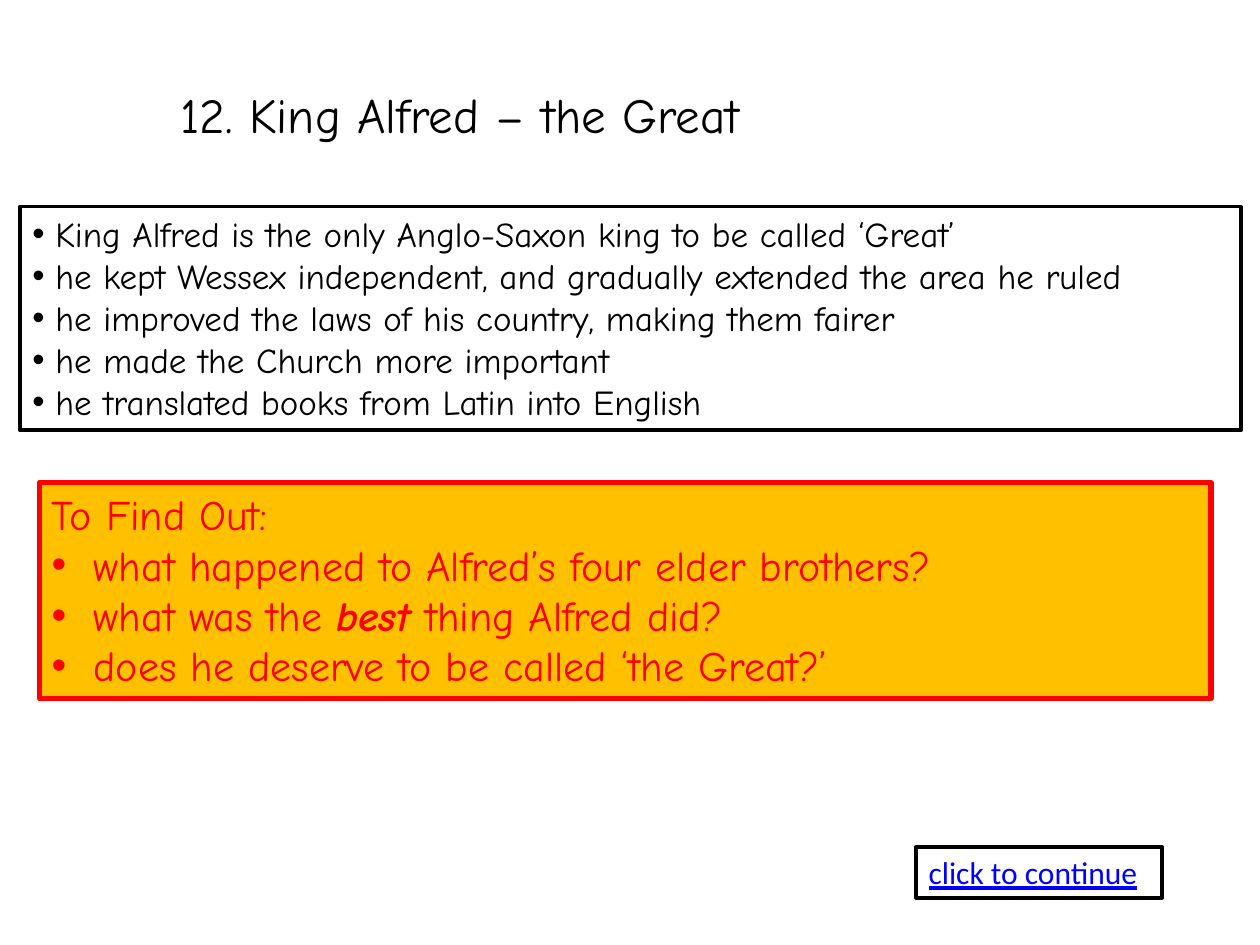
from lxml import etree
from pptx import Presentation
from pptx.dml.color import RGBColor
from pptx.enum.text import MSO_ANCHOR, MSO_AUTO_SIZE, PP_ALIGN
from pptx.oxml.ns import qn
from pptx.util import Pt

TOP, LEFT, FIXED = MSO_ANCHOR.TOP, PP_ALIGN.LEFT, MSO_AUTO_SIZE.NONE
TITLE_ONLY = 5
COMIC, PLAIN = "Comic Neue", "Calibri"
BLACK, RED, AMBER, BLUE = "000000", "FF0000", "FFC000", "0000FF"

# Content: a paragraph is a list of (text, emphasised) runs
TITLE = [[("12. King Alfred – the Great", False)]]
FACTS = [[(fact, False)] for fact in (
    "King Alfred is the only Anglo-Saxon king to be called ‘Great’",
    "he kept Wessex independent, and gradually extended the area he ruled",
    "he improved the laws of his country, making them fairer",
    "he made the Church more important",
    "he translated books from Latin into English",
)]
QUESTIONS = [
    [("To Find Out:", False)],
    [("what happened to Alfred’s four elder brothers?", False)],
    [("what was the ", False), ("best", True), (" thing Alfred did?", False)],
    [("does he deserve to be called ‘the Great?’", False)],
]
CONTINUE = [[("click to continue", False)]]

# Boxes: left, top, width, height, in points
TITLE_AT = (96, 44.5, 456, 41)
FACTS_AT = (11.5, 118, 697.5, 128)
QUESTIONS_AT = (22.5, 275.75, 669.5, 123.5)
CONTINUE_AT = (523.5, 484, 140.5, 29)


def color(value):
    return RGBColor.from_string(value)


def place(shape, box):
    shape.left, shape.top, shape.width, shape.height = map(Pt, box)


def add_bullet(paragraph, indent):
    properties = paragraph._p.get_or_add_pPr()
    properties.set("marL", str(Pt(indent)))
    properties.set("indent", str(-Pt(indent)))
    etree.SubElement(properties, qn("a:buFont")).set("typeface", "Arial")
    etree.SubElement(properties, qn("a:buChar")).set("char", "•")


def write(shape, paragraphs, size, font, ink, indent=0, unbulleted=0, underline=None):
    frame = shape.text_frame
    frame.word_wrap = True
    frame.auto_size = FIXED
    frame.vertical_anchor = TOP
    for number, runs in enumerate(paragraphs):
        paragraph = frame.add_paragraph() if number else frame.paragraphs[0]
        paragraph.alignment = LEFT
        if indent and number >= unbulleted:
            add_bullet(paragraph, indent)
        for text, emphasised in runs:
            run = paragraph.add_run()
            run.text = text
            run.font.size = Pt(size)
            run.font.name = font
            run.font.color.rgb = color(ink)
            run.font.underline = underline
            if emphasised:
                run.font.bold = run.font.italic = True


def add_box(slide, box, line, line_width, fill=None):
    shape = slide.shapes.add_textbox(*map(Pt, box))
    shape.line.color.rgb = color(line)
    shape.line.width = Pt(line_width)
    if fill:
        shape.fill.solid()
        shape.fill.fore_color.rgb = color(fill)
    return shape


def main():
    deck = Presentation()
    deck.slide_width, deck.slide_height = Pt(720), Pt(540)
    slide = deck.slides.add_slide(deck.slide_layouts[TITLE_ONLY])

    # Title
    title = slide.shapes.title
    place(title, TITLE_AT)
    write(title, TITLE, 28, COMIC, BLACK)

    # Facts about the king
    facts = add_box(slide, FACTS_AT, BLACK, 2.25)
    write(facts, FACTS, 20, COMIC, BLACK, indent=13)

    # Questions under a heading without a bullet
    questions = add_box(slide, QUESTIONS_AT, RED, 3, AMBER)
    write(questions, QUESTIONS, 24, COMIC, RED, indent=24, unbulleted=1)

    # Prompt to move on
    prompt = add_box(slide, CONTINUE_AT, BLACK, 2.25)
    write(prompt, CONTINUE, 18, PLAIN, BLUE, underline=True)

    deck.save("out.pptx")


if __name__ == "__main__":
    main()
